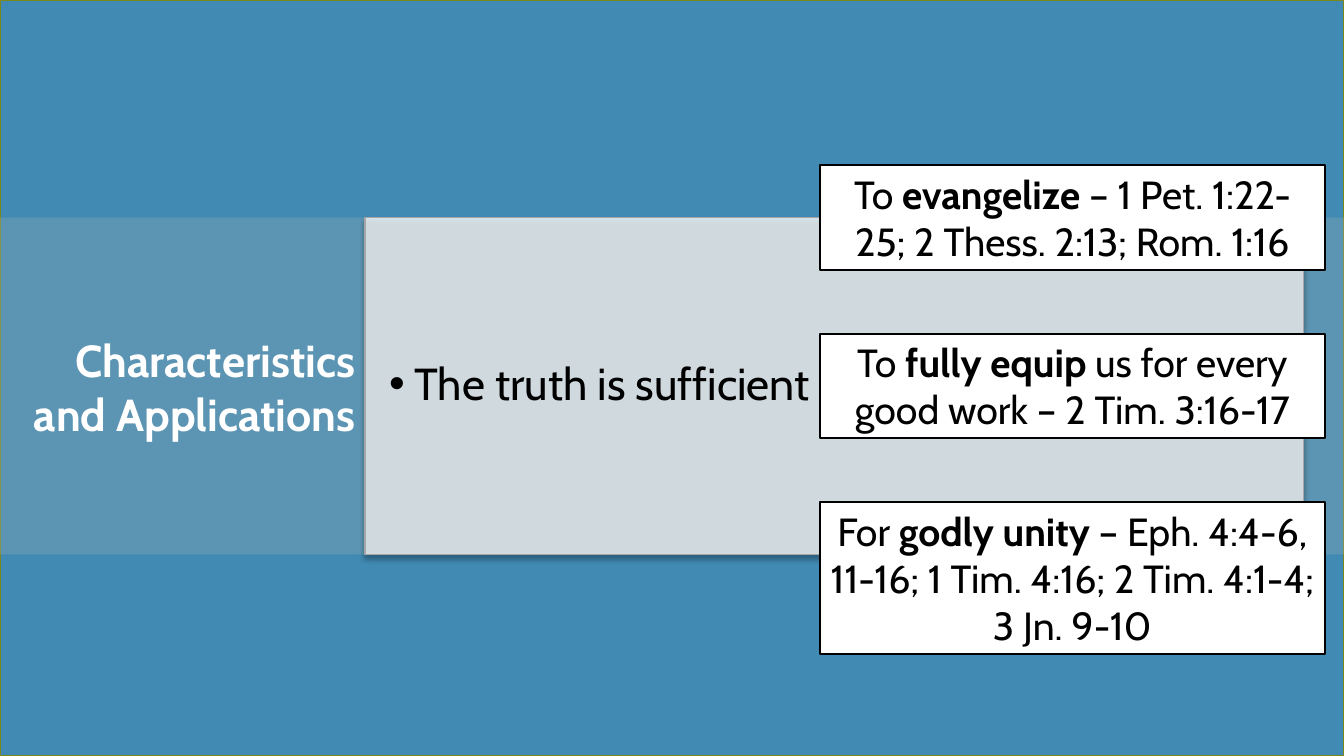
from lxml.etree import SubElement
from pptx import Presentation
from pptx.dml.color import RGBColor
from pptx.enum.shapes import MSO_SHAPE
from pptx.enum.text import MSO_ANCHOR, MSO_AUTO_SIZE, PP_ALIGN
from pptx.oxml.ns import qn
from pptx.util import Inches, Pt

COLORS = {
    "backdrop": "418AB3",
    "edge": "7B871D",
    "band": "9BAFB5",
    "white": "FFFFFF",
    "panel_edge": "A6A6A6",
    "black": "000000",
}


class SlideBuilder:
    """Draws styled elements on one slide."""

    font = "Cabin"

    def __init__(self, slide):
        self.slide = slide

    def style_runs(self, paragraph, size, color):
        for run in paragraph.runs:
            run.font.name = self.font
            run.font.size = Pt(size)
            run.font.color.rgb = RGBColor.from_string(COLORS[color])

    def panel(self, box, fill, edge=None, width=1, opacity=100):
        panel = self.slide.shapes.add_shape(MSO_SHAPE.RECTANGLE, *map(Inches, box))
        panel.shadow.inherit = False
        panel.fill.solid()
        panel.fill.fore_color.rgb = RGBColor.from_string(COLORS[fill])
        if opacity < 100:
            tint = panel.element.spPr.find(f"{qn('a:solidFill')}/{qn('a:srgbClr')}")
            SubElement(tint, qn("a:alpha"), val=str(opacity * 1000))
        if edge:
            panel.line.color.rgb = RGBColor.from_string(COLORS[edge])
            panel.line.width = Pt(width)
        else:
            panel.line.fill.background()
        return panel

    def cast_shadow(self, panel, opacity, blur, distance):
        effects = panel.element.spPr.find(qn("a:effectLst"))
        shadow = SubElement(
            effects, qn("a:outerShdw"), blurRad=str(Pt(blur)), dist=str(Pt(distance)),
            dir="5400000", algn="t", rotWithShape="0")
        tint = SubElement(shadow, qn("a:srgbClr"), val=COLORS["black"])
        SubElement(tint, qn("a:alpha"), val=str(opacity * 1000))

    def place(self, placeholder, box, text, color, anchor, auto_size):
        placeholder.left, placeholder.top, placeholder.width, placeholder.height = map(Inches, box)
        placeholder.element.getparent().append(placeholder.element)
        frame = placeholder.text_frame
        frame.text = text
        frame.word_wrap = True
        frame.auto_size = auto_size
        frame.vertical_anchor = anchor
        paragraph = frame.paragraphs[0]
        self.style_runs(paragraph, 32, color)
        return paragraph

    def title(self, box, text):
        heading = self.place(self.slide.shapes.title, box, text, "white",
                             MSO_ANCHOR.TOP, MSO_AUTO_SIZE.SHAPE_TO_FIT_TEXT)
        heading.alignment = PP_ALIGN.RIGHT
        heading.runs[0].font.bold = True

    def bullet(self, box, text):
        body = self.slide.placeholders[1]
        point = self.place(body, box, text, "black", MSO_ANCHOR.MIDDLE, MSO_AUTO_SIZE.NONE)
        point.line_spacing = 0.9
        point.space_before = Pt(24)
        properties = next(body.element.iter(qn("a:pPr")))
        properties.set("marL", str(Inches(0.25)))
        properties.set("indent", str(Inches(-0.25)))
        SubElement(properties, qn("a:buFont"), typeface="Arial")
        SubElement(properties, qn("a:buChar"), char="•")

    def callout(self, box, lead, emphasis, references):
        callout = self.panel(box, "white", "black", 1.5)
        frame = callout.text_frame
        frame.word_wrap = True
        frame.auto_size = MSO_AUTO_SIZE.SHAPE_TO_FIT_TEXT
        frame.vertical_anchor = MSO_ANCHOR.TOP
        purpose = frame.paragraphs[0]
        purpose.alignment = PP_ALIGN.CENTER
        for words in (lead, emphasis, references):
            run = purpose.add_run()
            run.text = words
            run.font.bold = words == emphasis
        self.style_runs(purpose, 28, "black")


def main():
    deck = Presentation()
    deck.slide_width, deck.slide_height = Inches(13.33), Inches(7.5)
    builder = SlideBuilder(deck.slides.add_slide(deck.slide_layouts[1]))

    band_top, band_height = 2.16, 3.34
    builder.panel((0, 0, 13.33, 7.5), "backdrop", "edge")
    builder.panel((0, band_top, 13.33, band_height), "band", opacity=30)
    content = builder.panel((3.62, band_top, 9.31, band_height), "white", "panel_edge", opacity=75)
    builder.cast_shadow(content, opacity=40, blur=4, distance=3)

    builder.title((-0.14, 3.25, 3.77, 1.18), "Characteristics and Applications")
    builder.bullet((3.76, band_top, 9.18, band_height), "The truth is sufficient")

    purposes = [
        (1.04, "To ", "evangelize", " – 1 Pet. 1:22-25; 2 Thess. 2:13; Rom. 1:16"),
        (1.04, "To ", "fully equip ", "us for every good work – 2 Tim. 3:16-17"),
        (1.51, "For ", "godly unity ", "– Eph. 4:4-6, 11-16; 1 Tim. 4:16; 2 Tim. 4:1-4; 3 Jn. 9-10"),
    ]
    top, gap = 1.64, 0.63
    for height, lead, emphasis, references in purposes:
        builder.callout((8.13, top, 5.01, height), lead, emphasis, references)
        top += height + gap

    deck.save("out.pptx")


if __name__ == "__main__":
    main()
